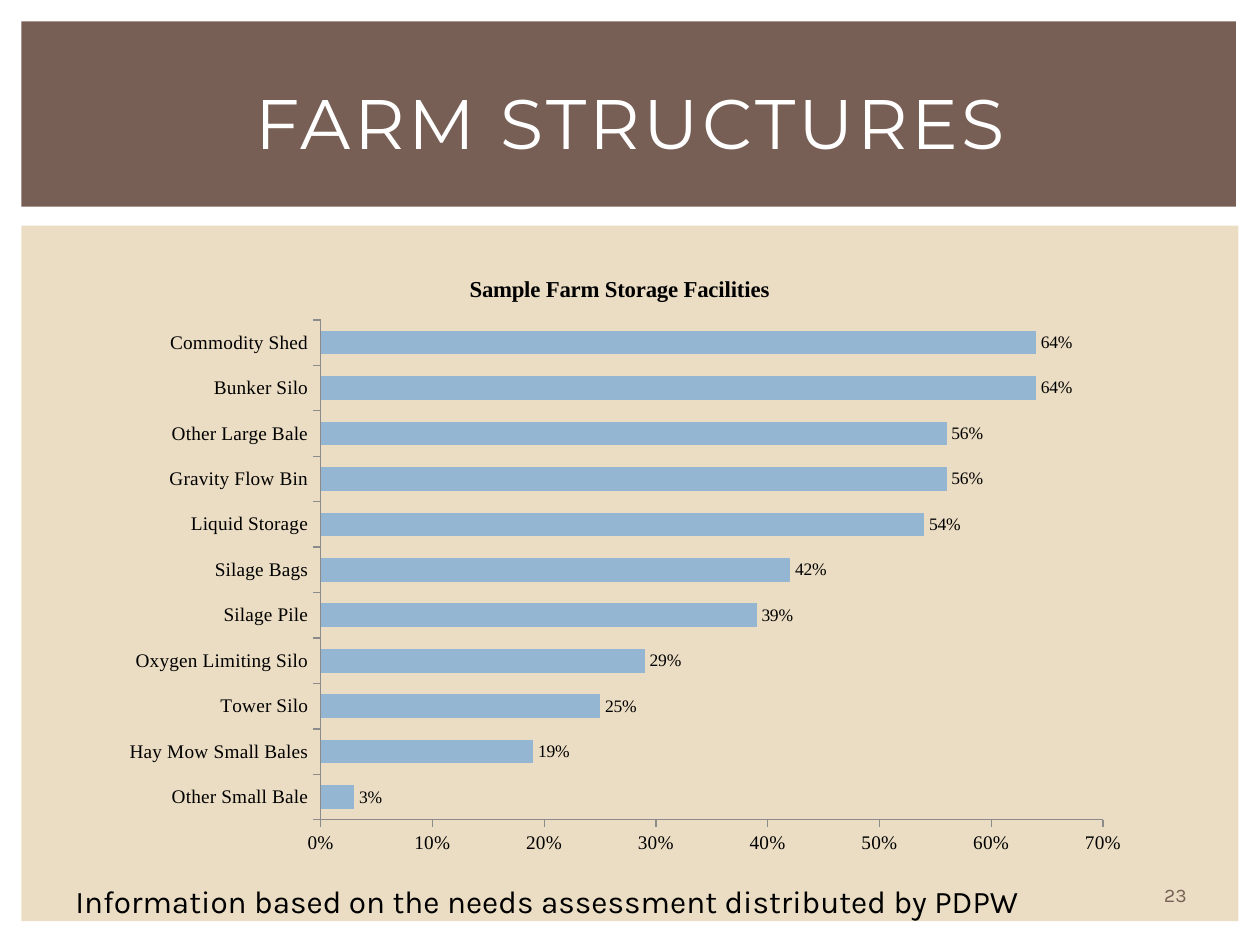
"""Build the farm structures slide with its storage facilities bar chart."""
from lxml.etree import SubElement
from pptx import Presentation
from pptx.chart.data import CategoryChartData
from pptx.dml.color import RGBColor
from pptx.enum.chart import XL_CHART_TYPE as ChartType
from pptx.enum.chart import XL_LABEL_POSITION as LabelPosition
from pptx.enum.chart import XL_TICK_MARK as TickMark
from pptx.enum.shapes import MSO_SHAPE as Shape
from pptx.enum.text import MSO_ANCHOR as Anchor
from pptx.enum.text import PP_ALIGN as Align
from pptx.oxml.ns import qn
from pptx.util import Inches, Pt

COLORS = {
    "sand": "EBDDC3",
    "brown": "775F55",
    "white": "FFFFFF",
    "black": "000000",
    "blue": "94B6D2",
    "gray": "8B8B8B",
}
FACILITIES = {
    "Other Small Bale": 0.03,
    "Hay Mow Small Bales": 0.19,
    "Tower Silo": 0.25,
    "Oxygen Limiting Silo": 0.29,
    "Silage Pile": 0.39,
    "Silage Bags": 0.42,
    "Liquid Storage": 0.54,
    "Gravity Flow Bin": 0.56,
    "Other Large Bale": 0.56,
    "Bunker Silo": 0.64,
    "Commodity Shed": 0.64,
}
PLOT_AREA = {"x": 0.21, "y": 0.11, "w": 0.76, "h": 0.81}


class SlideBuilder:
    def __init__(self, slide):
        self.slide = slide
        self.body_font = "Karla"
        self.chart_font = "Times New Roman"

    def color(self, name):
        return RGBColor.from_string(COLORS[name])

    def style(self, font, family, size, color="black", bold=False):
        font.name = family
        font.size = Pt(size)
        font.bold = bold
        font.color.rgb = self.color(color)

    def panel(self, box, color):
        panel = self.slide.shapes.add_shape(Shape.RECTANGLE, *map(Inches, box))
        panel.shadow.inherit = False
        panel.fill.solid()
        panel.fill.fore_color.rgb = self.color(color)
        panel.line.fill.background()

    def text(self, box, words, size, color="black", family=None,
             align=Align.LEFT, anchor=Anchor.TOP, spacing=0):
        frame = self.slide.shapes.add_textbox(*map(Inches, box)).text_frame
        frame.word_wrap = True
        frame.vertical_anchor = anchor
        paragraph = frame.paragraphs[0]
        paragraph.alignment = align
        run = paragraph.add_run()
        run.text = words
        self.style(run.font, family or self.body_font, size, color)
        if spacing:
            run._r.get_or_add_rPr().set("spc", str(spacing * 100))

    def axis(self, axis):
        axis.has_major_gridlines = False
        axis.major_tick_mark = TickMark.OUTSIDE
        axis.minor_tick_mark = TickMark.NONE
        axis.format.line.color.rgb = self.color("gray")
        axis.format.line.width = Pt(0.75)
        self.style(axis.tick_labels.font, self.chart_font, 11)

    def place_plot(self, chart):
        plot_area = chart._chartSpace.chart.plotArea
        layout = plot_area.find(qn("c:layout"))
        if layout is None:
            layout = SubElement(plot_area, qn("c:layout"))
            plot_area.insert(0, layout)
        manual = SubElement(layout, qn("c:manualLayout"))
        settings = {"layoutTarget": "inner", "xMode": "edge", "yMode": "edge"}
        for tag, value in (settings | PLOT_AREA).items():
            SubElement(manual, qn(f"c:{tag}")).set("val", str(value))

    def bar_chart(self, box, title, values):
        data = CategoryChartData(number_format="0%")
        data.categories = list(values)
        data.add_series("Series 1", list(values.values()))
        chart = self.slide.shapes.add_chart(
            ChartType.BAR_CLUSTERED, *map(Inches, box), data).chart
        self.style(chart.font, self.chart_font, 11)
        chart.has_legend = False
        chart.has_title = True
        heading = chart.chart_title.text_frame.paragraphs[0].add_run()
        heading.text = title
        self.style(heading.font, self.chart_font, 13, bold=True)

        self.axis(chart.category_axis)
        self.axis(chart.value_axis)
        chart.value_axis.minimum_scale = 0
        chart.value_axis.maximum_scale = 0.7
        chart.value_axis.major_unit = 0.1
        chart.value_axis.tick_labels.number_format = "0%"
        chart.value_axis.tick_labels.number_format_is_linked = False

        plot = chart.plots[0]
        plot.gap_width = 92
        plot.vary_by_categories = False
        bars = plot.series[0]
        bars.format.fill.solid()
        bars.format.fill.fore_color.rgb = self.color("blue")
        labels = bars.data_labels
        labels.show_value = True
        labels.number_format = "0%"
        labels.number_format_is_linked = False
        labels.position = LabelPosition.OUTSIDE_END
        self.style(labels.font, self.chart_font, 10)
        self.place_plot(chart)


def main():
    deck = Presentation()
    deck.slide_width = Inches(10)
    deck.slide_height = Inches(7.5)
    builder = SlideBuilder(deck.slides.add_slide(deck.slide_layouts[6]))
    builder.panel((0.17, 1.79, 9.66, 5.52), "sand")
    builder.panel((0.17, 0.17, 9.64, 1.47), "brown")
    builder.text((0.42, 0.39, 9.17, 1.15), "FARM STRUCTURES", 40, "white",
                 "Montserrat", Align.CENTER, Anchor.MIDDLE, spacing=2)
    builder.bar_chart((0.83, 2, 8.17, 4.9),
                      "Sample Farm Storage Facilities", FACILITIES)
    builder.text((9.01, 6.95, 0.64, 0.3), "23", 11, "brown",
                 align=Align.CENTER, anchor=Anchor.MIDDLE)
    builder.text((0.5, 6.95, 8.5, 0.4),
                 "Information based on the needs assessment distributed by PDPW", 18)
    deck.save("out.pptx")


if __name__ == "__main__":
    main()
